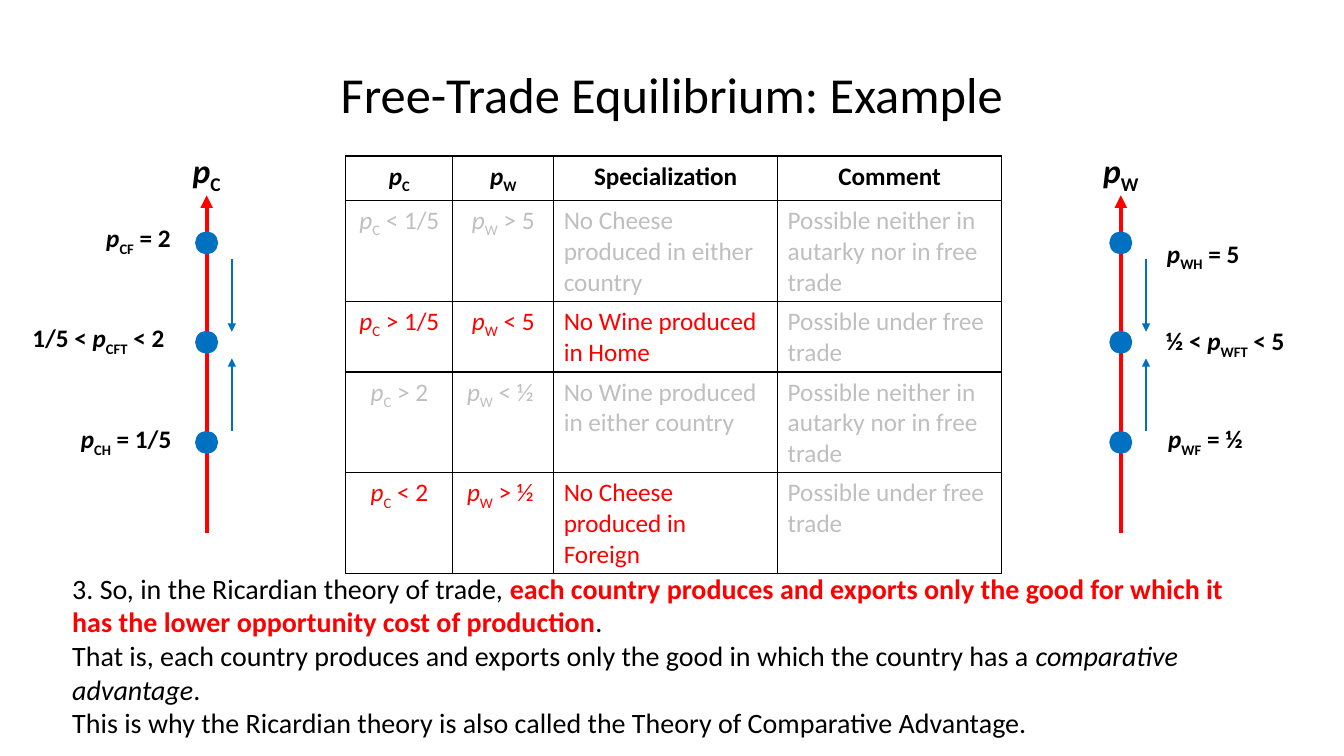
from dataclasses import dataclass

import pptx
import pptx.dml.color
import pptx.enum.shapes
import pptx.enum.text
import pptx.oxml
import pptx.oxml.ns
import pptx.util
from lxml import etree

Pt = pptx.util.Pt
ALIGN = pptx.enum.text.PP_ALIGN
SHAPE = pptx.enum.shapes.MSO_SHAPE
FONT = "Calibri"
BLACK, WHITE, RED, BLUE, GREY = "000000", "FFFFFF", "FF0000", "0070C0", "BFBFBF"


@dataclass(frozen=True)
class Span:
    text: str
    italic: bool = False
    bold: bool = False
    subscript: bool = False
    color: str = ""


@dataclass(frozen=True)
class PriceLabel:
    spans: list[Span]
    left: float
    top: float
    width: float


@dataclass(frozen=True)
class PriceAxis:
    x: float
    good: str
    align: int
    labels: list[PriceLabel]


@dataclass(frozen=True)
class Regime:
    cheese: str
    wine: str
    outcome: str
    comment: str
    color: str


def rgb(value: str):
    return pptx.dml.color.RGBColor.from_string(value)


def price(subscript: str, relation: str = "", lower: str = "") -> list[Span]:
    spans = [Span(lower), Span("p", italic=True), Span(subscript, subscript=True), Span(relation)]
    return [span for span in spans if span.text]


def write(frame, paragraphs: list[list[Span]], *, size: float, color: str = BLACK,
          bold: bool = False, align: int = ALIGN.LEFT) -> None:
    frame.word_wrap = True
    for index, spans in enumerate(paragraphs):
        para = frame.add_paragraph() if index else frame.paragraphs[0]
        para.alignment = align
        for span in spans:
            run = para.add_run()
            run.text = span.text
            run.font.name, run.font.size = FONT, Pt(size)
            run.font.bold, run.font.italic = bold or span.bold, span.italic
            run.font.color.rgb = rgb(span.color or color)
            if span.subscript:
                run.font._element.set("baseline", "-25000")


def add_text(page, spans_by_paragraph: list[list[Span]], left: float, top: float,
             width: float, height: float, **text_format):
    box = page.shapes.add_textbox(Pt(left), Pt(top), Pt(width), Pt(height))
    write(box.text_frame, spans_by_paragraph, **text_format)
    return box


def add_label(page, spans: list[Span], left: float, top: float, width: float,
              height: float, **text_format):
    box = page.shapes.add_shape(SHAPE.RECTANGLE, Pt(left), Pt(top), Pt(width), Pt(height))
    box.shadow.inherit = False
    box.fill.solid()
    box.fill.fore_color.rgb = rgb(WHITE)
    box.line.fill.background()
    box.text_frame.vertical_anchor = pptx.enum.text.MSO_ANCHOR.TOP
    write(box.text_frame, [spans], bold=True, **text_format)
    return box


def add_arrow(page, x: float, start: float, end: float, color: str, weight: float):
    arrow = page.shapes.add_connector(
        pptx.enum.shapes.MSO_CONNECTOR.STRAIGHT, Pt(x), Pt(start), Pt(x), Pt(end))
    arrow.line.color.rgb = rgb(color)
    arrow.line.width = Pt(weight)
    head = etree.SubElement(arrow.line._get_or_add_ln(), pptx.oxml.ns.qn("a:tailEnd"))
    head.set("type", "triangle")
    etree.SubElement(arrow._element.spPr, pptx.oxml.ns.qn("a:effectLst"))
    return arrow


def add_dot(page, x: float, y: float, size: float = 14.4) -> None:
    dot = page.shapes.add_shape(
        SHAPE.OVAL, Pt(x - size / 2), Pt(y - size / 2), Pt(size), Pt(size))
    dot.shadow.inherit = False
    dot.fill.solid()
    dot.fill.fore_color.rgb = rgb(BLUE)
    dot.line.color.rgb = rgb(BLUE)
    dot.line.width = Pt(2)


def draw_axis(page, axis: PriceAxis) -> None:
    for label in axis.labels:
        add_label(page, label.spans, label.left, label.top, label.width, 28.8,
                  size=18, align=axis.align)
    name = add_label(page, price(axis.good), axis.x - 25.2, 103.5, 50.4, 36,
                     size=24, align=ALIGN.CENTER)
    add_arrow(page, axis.x, 381, 139.5, RED, 3).end_connect(name, 2)
    for y in (173.5, 244.5, 316):
        add_dot(page, axis.x, y)
    # Autarky prices converge on the free-trade price
    for start, end in ((185, 237), (308, 256)):
        add_arrow(page, axis.x + 18, start, end, BLUE, 1.5)


def draw_borders(cell) -> None:
    properties = cell._tc.get_or_add_tcPr()
    for position, side in enumerate(("lnL", "lnR", "lnT", "lnB")):
        properties.insert(position, pptx.oxml.parse_xml(
            f'<a:{side} {pptx.oxml.ns.nsdecls("a")} w="12700"><a:solidFill>'
            f'<a:srgbClr val="{BLACK}"/></a:solidFill></a:{side}>'))


def draw_table(page, regimes: list[Regime]) -> None:
    widths = (76.5, 72, 160, 160)
    row_height = 29.5
    rows = [[(price("C"), BLACK), (price("W"), BLACK),
             ([Span("Specialization")], BLACK), ([Span("Comment")], BLACK)]]
    rows += [[(price("C", regime.cheese), regime.color), (price("W", regime.wine), regime.color),
              ([Span(regime.outcome)], regime.color), ([Span(regime.comment)], GREY)]
             for regime in regimes]
    table = page.shapes.add_table(len(rows), len(widths), Pt(247), Pt(111.5), Pt(sum(widths)),
                                  Pt(row_height * len(rows))).table
    table.first_row = table.horz_banding = False
    for column, width in zip(table.columns, widths):
        column.width = Pt(width)
    for row_index, row in enumerate(rows):
        table.rows[row_index].height = Pt(row_height)
        for column_index, (spans, color) in enumerate(row):
            cell = table.cell(row_index, column_index)
            cell.fill.background()
            draw_borders(cell)
            centred = row_index == 0 or column_index < 2
            write(cell.text_frame, [spans], size=18, color=color, bold=row_index == 0,
                  align=ALIGN.CENTER if centred else ALIGN.LEFT)


AXES = [
    PriceAxis(147.6, "C", ALIGN.RIGHT, [
        PriceLabel(price("CH", " = 1/5"), 29.5, 299, 100),
        PriceLabel(price("CFT", " < 2", "1/5 < "), 10, 227, 114.5),
        PriceLabel(price("CF", " = 2"), 66.5, 155.5, 62.5)]),
    PriceAxis(800.6, "W", ALIGN.LEFT, [
        PriceLabel(price("WF", " = ½"), 827.3, 299, 85),
        PriceLabel(price("WFT", " < 5", "½ < "), 825.8, 229, 124),
        PriceLabel(price("WH", " = 5"), 826.5, 166.5, 78)]),
]
NEVER = "Possible neither in autarky nor in free trade"
FREE_TRADE = "Possible under free trade"
REGIMES = [
    Regime(" < 1/5", " > 5", "No Cheese produced in either country", NEVER, GREY),
    Regime(" > 1/5", " < 5", "No Wine produced in Home", FREE_TRADE, RED),
    Regime(" > 2", " < ½ ", "No Wine produced in either country", NEVER, GREY),
    Regime(" < 2", " > ½ ", "No Cheese produced in Foreign", FREE_TRADE, RED),
]
CONCLUSION = [
    [Span("3. So, in the Ricardian theory of trade, "),
     Span("each country produces and exports only the good for which it has the lower "
          "opportunity cost of production", bold=True, color=RED), Span(".")],
    [Span("That is, each country produces and exports only the good in which the country has a "),
     Span("comparative advantage", italic=True), Span(".")],
    [Span("This is why the Ricardian theory is also called the Theory of Comparative Advantage.")],
]


def main() -> None:
    deck = pptx.Presentation()
    deck.slide_width, deck.slide_height = Pt(960), Pt(540)
    page = deck.slides.add_slide(deck.slide_layouts[6])

    # Title
    title = add_text(page, [[Span("Free-Trade Equilibrium: Example")]], 48, 21.6, 864, 90,
                     size=36, align=ALIGN.CENTER)
    title.text_frame.vertical_anchor = pptx.enum.text.MSO_ANCHOR.MIDDLE

    # Relative price axes
    for axis in AXES:
        draw_axis(page, axis)

    # Conclusion and specialization table
    add_text(page, CONCLUSION, 44.5, 404.5, 867.5, 128, size=20)
    draw_table(page, REGIMES)

    deck.save("out.pptx")


if __name__ == "__main__":
    main()
